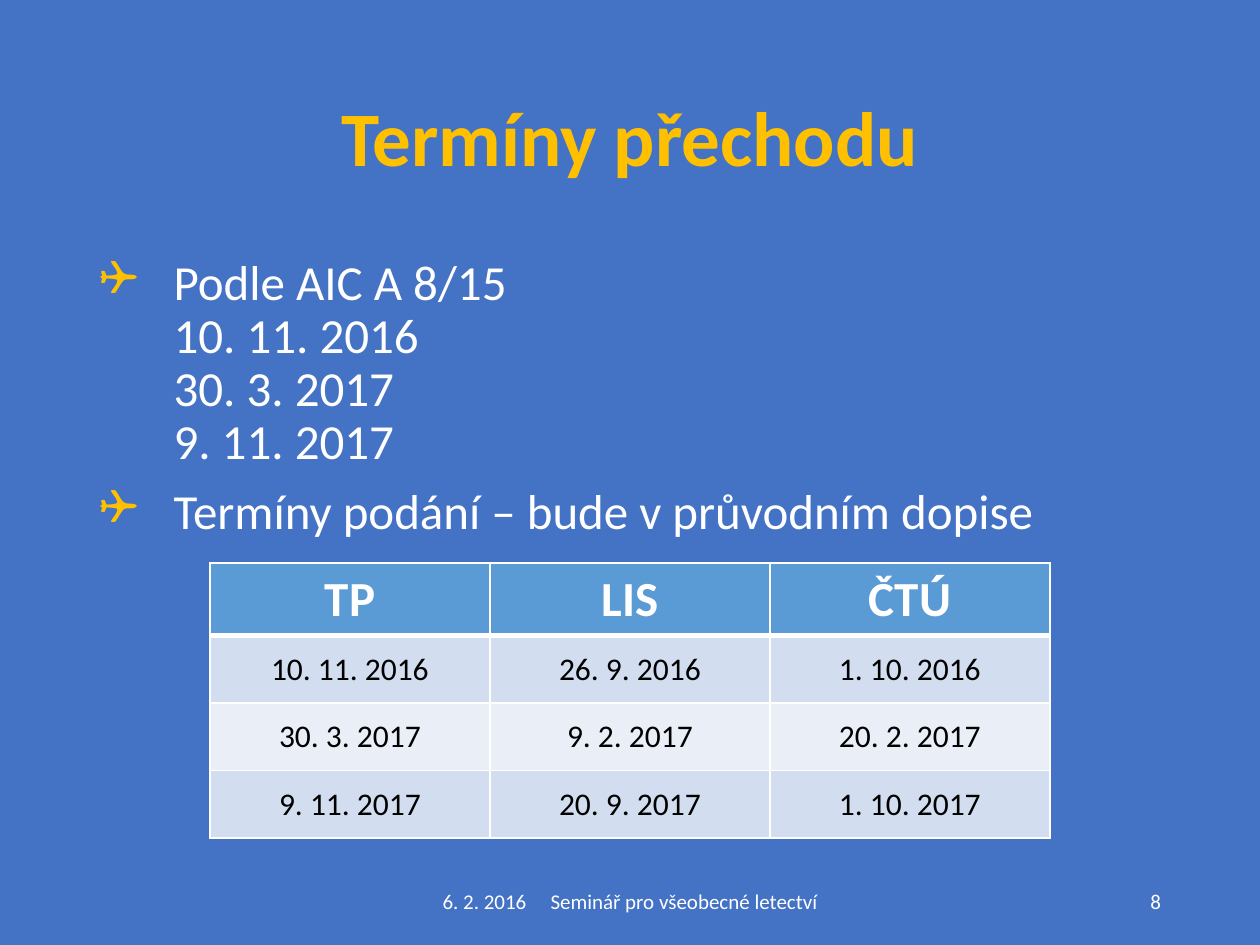
from dataclasses import dataclass

from lxml.etree import SubElement
from pptx import Presentation
from pptx.dml.color import RGBColor
from pptx.enum.text import MSO_ANCHOR as Anchor, MSO_AUTO_SIZE as AutoSize, PP_ALIGN as Align
from pptx.oxml import parse_xml
from pptx.oxml.ns import nsdecls, qn
from pptx.util import Pt

TITLE = "Termíny přechodu"
BULLETS = [
    ["Podle AIC A 8/15", "10. 11. 2016", "30. 3. 2017", "9. 11. 2017"],
    ["Termíny podání – bude v průvodním dopise"],
]
DEADLINES = [
    ["TP", "LIS", "ČTÚ"],
    ["10. 11. 2016", "26. 9. 2016", "1. 10. 2016"],
    ["30. 3. 2017", "9. 2. 2017", "20. 2. 2017"],
    ["9. 11. 2017", "20. 9. 2017", "1. 10. 2017"],
]
FOOTER_DATE, FOOTER_EVENT = "6. 2. 2016", "Seminář pro všeobecné letectví"
PAGE_NUMBER = "8"


@dataclass(frozen=True)
class Theme:
    font: str = "Calibri"
    background: str = "4472C4"
    accent: str = "FFC000"
    light: str = "FFFFFF"
    dark: str = "000000"
    header: str = "5B9BD5"
    bands: tuple = ("D2DEEF", "EAEFF7")
    title: int = 44
    body: int = 28
    cell: int = 18
    footer: int = 12


T = Theme()
WIDTH, HEIGHT = 720, 540
MARGIN = 49.5
CONTENT_W = WIDTH - 2 * MARGIN
FOOTER_Y, FOOTER_H = 500.5, 28.75
FOOTER_W, NUMBER_W = 243, 162
TABLE_Y, COL_W, HEADER_H, ROW_H = 321.75, 160, 41.4, 38.6
INDENT = 42.5
FOOTER_GAP = 11


def rgb(color):
    return RGBColor.from_string(color)


def place(sp, x, y, w, h):
    sp.left, sp.top, sp.width, sp.height = Pt(x), Pt(y), Pt(w), Pt(h)


def add_run(p, text, size, color, bold=False):
    r = p.add_run()
    r.text = text
    r.font.name, r.font.size, r.font.bold = T.font, Pt(size), bold
    r.font.color.rgb = rgb(color)
    return r


def add_bullet(p):
    pPr = p._p.get_or_add_pPr()
    pPr.set("marL", str(Pt(INDENT)))
    pPr.set("indent", str(-Pt(INDENT)))
    SubElement(SubElement(pPr, qn("a:buClr")), qn("a:srgbClr"), val=T.accent)
    SubElement(pPr, qn("a:buFont"), typeface="Wingdings")
    SubElement(pPr, qn("a:buChar"), char="❑")


def set_borders(cell, top, bottom):
    tcPr = cell._tc.get_or_add_tcPr()
    for i, (side, width) in enumerate([("L", 1), ("R", 1), ("T", top), ("B", bottom)]):
        tcPr.insert(i, parse_xml(
            f'<a:ln{side} {nsdecls("a")} w="{Pt(width)}"><a:solidFill>'
            f'<a:srgbClr val="{T.light}"/></a:solidFill></a:ln{side}>'))


def add_title(slide):
    sp = slide.shapes.title
    place(sp, MARGIN, 28.75, CONTENT_W, 104.4)
    tf = sp.text_frame
    tf.auto_size, tf.vertical_anchor = AutoSize.NONE, Anchor.MIDDLE
    p = tf.paragraphs[0]
    p.alignment, p.line_spacing = Align.CENTER, 0.9
    add_run(p, TITLE, T.title, T.accent, bold=True)


def add_body(slide):
    sp = slide.placeholders[1]
    place(sp, MARGIN, 143.75, CONTENT_W, 342.6)
    tf = sp.text_frame
    tf.auto_size = AutoSize.NONE
    for i, lines in enumerate(BULLETS):
        p = tf.add_paragraph() if i else tf.paragraphs[0]
        p.line_spacing, p.space_before = 0.9, Pt(10)
        add_bullet(p)
        for j, line in enumerate(lines):
            if j:
                p.add_line_break()
            add_run(p, line, T.body, T.light)


def add_deadlines(slide):
    rows, cols = len(DEADLINES), len(DEADLINES[0])
    table_w = cols * COL_W
    table = slide.shapes.add_table(
        rows, cols, Pt((WIDTH - table_w) / 2), Pt(TABLE_Y),
        Pt(table_w), Pt(HEADER_H + (rows - 1) * ROW_H)).table
    for column in table.columns:
        column.width = Pt(COL_W)
    for i, values in enumerate(DEADLINES):
        head = i == 0
        table.rows[i].height = Pt(HEADER_H if head else ROW_H)
        for j, value in enumerate(values):
            cell = table.cell(i, j)
            cell.vertical_anchor = Anchor.TOP if head else Anchor.MIDDLE
            cell.fill.solid()
            cell.fill.fore_color.rgb = rgb(T.header if head else T.bands[(i - 1) % 2])
            set_borders(cell, top=3 if i == 1 else 1, bottom=3 if head else 1)
            p = cell.text_frame.paragraphs[0]
            p.alignment = Align.CENTER
            add_run(p, value, T.body if head else T.cell,
                    T.light if head else T.dark, bold=head)


def add_footer_box(slide, x, w, align):
    """Add an empty box on the footer line and return its paragraph."""
    tf = slide.shapes.add_textbox(Pt(x), Pt(FOOTER_Y), Pt(w), Pt(FOOTER_H)).text_frame
    tf.word_wrap, tf.vertical_anchor = True, Anchor.MIDDLE
    p = tf.paragraphs[0]
    p.alignment = align
    return p


def add_footer(slide):
    p = add_footer_box(slide, (WIDTH - FOOTER_W) / 2, FOOTER_W, Align.CENTER)
    add_run(p, FOOTER_DATE, T.footer, T.light)
    gap = add_run(p, " ", T.footer, T.light)
    gap.font._element.set("spc", str(FOOTER_GAP * 100))
    add_run(p, FOOTER_EVENT, T.footer, T.light)
    p = add_footer_box(slide, WIDTH - MARGIN - NUMBER_W, NUMBER_W, Align.RIGHT)
    add_run(p, PAGE_NUMBER, T.footer, T.light)


def main():
    prs = Presentation()
    prs.slide_width, prs.slide_height = Pt(WIDTH), Pt(HEIGHT)
    slide = prs.slides.add_slide(prs.slide_layouts[1])
    slide.background.fill.solid()
    slide.background.fill.fore_color.rgb = rgb(T.background)
    add_title(slide)
    add_body(slide)
    add_footer(slide)
    add_deadlines(slide)
    prs.save("out.pptx")


if __name__ == "__main__":
    main()
